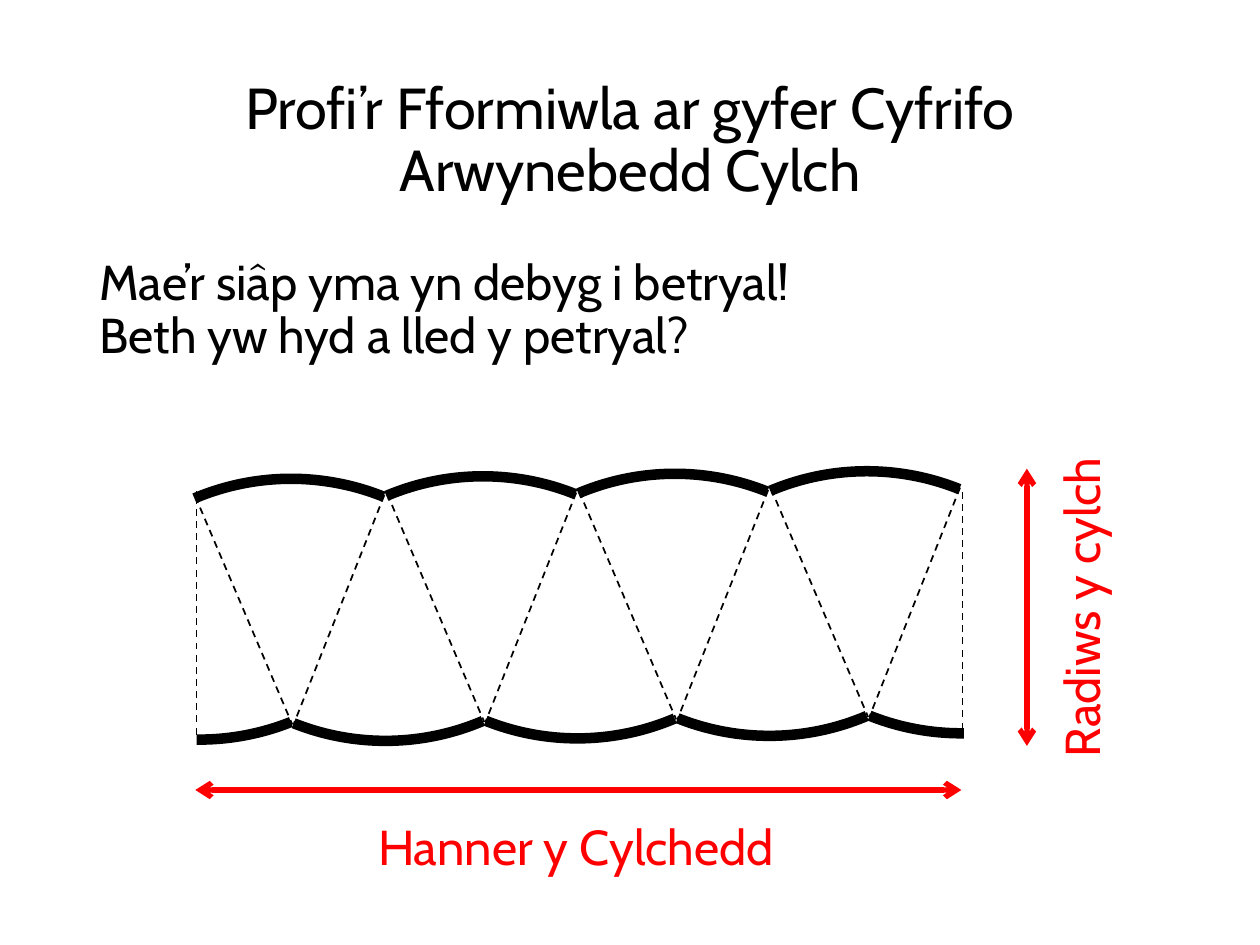
"""Build a slide that rearranges circle sectors into a near rectangle."""
from dataclasses import dataclass

from lxml import etree
from pptx import Presentation
from pptx import util as u
from pptx.dml.color import RGBColor
from pptx.enum import dml, shapes, text
from pptx.oxml import ns

HUES = {"ink": "000000", "mark": "FF0000"}
FONT = "Cabin"
COUNT = 4
STEP = 4.57 / 3
RISE = -0.02
SIDE = 3.94
FULL, HALF = 188.87, 175.38


@dataclass
class Label:
    words: str
    box: tuple
    hue: str = "mark"
    align: text.PP_ALIGN = text.PP_ALIGN.CENTER
    turn: float = 0


@dataclass
class Rule:
    start: tuple
    end: tuple
    hue: str = "ink"
    width: float = 1
    arrow: bool = False


@dataclass
class Arc:
    left: float
    top: float
    turn: float
    sweep: float = FULL
    flips: tuple = ()


LABELS = [
    Label("Mae’r siâp yma yn debyg i betryal!\nBeth yw hyd a lled y petryal?",
          (0.69, 2, 8.62, 1.2), "ink", text.PP_ALIGN.LEFT),
    Label("Hanner y Cylchedd", (0.26, 6.48, 8.62, 0.58)),
    Label("Radiws y cylch", (7.05, 4.53, 3.17, 0.58), turn=270),
]
EDGES = [
    Rule((7.64, 5.79), (7.64, 3.87)),
    Rule((1.56, 5.83), (1.56, 3.9)),
    Rule((1.55, 6.27), (7.63, 6.27), "mark", 3, True),
    Rule((8.15, 3.72), (8.15, 5.92), "mark", 3, True),
]


def style(item, form: dict) -> None:
    for name, value in form.items():
        setattr(item, name, value)


def tint(hue: str) -> RGBColor:
    return RGBColor.from_string(HUES[hue])


def write(shape, words: str, size: float, hue: str, form: dict) -> None:
    frame = shape.text_frame
    frame.word_wrap = True
    para = frame.paragraphs[0]
    style(para, {"line_spacing": 0.9, **form})
    for row, line in enumerate(words.split("\n")):
        if row:
            para.add_line_break()
        run = para.add_run()
        run.text = line
        style(run.font, {"name": FONT, "size": u.Pt(size), "bold": False})
        run.font.color.rgb = tint(hue)


def place(shape, box: tuple) -> None:
    names = ("left", "top", "width", "height")
    style(shape, dict(zip(names, map(u.Inches, box))))


def add_title(slide, words: str) -> None:
    title = slide.shapes.title
    place(title, (0.69, 0.4, 8.62, 1.45))
    style(title.text_frame, {"vertical_anchor": text.MSO_ANCHOR.MIDDLE,
                             "auto_size": text.MSO_AUTO_SIZE.NONE})
    write(title, words, 33, "ink", {"alignment": text.PP_ALIGN.CENTER})


def add_label(slide, label: Label) -> None:
    box = slide.shapes.add_textbox(*map(u.Inches, label.box))
    box.rotation = label.turn
    write(box, label.words, 28, label.hue,
          {"alignment": label.align, "space_before": u.Pt(7.5)})


def add_rule(slide, rule: Rule) -> None:
    ends = map(u.Inches, rule.start + rule.end)
    link = slide.shapes.add_connector(shapes.MSO_CONNECTOR.STRAIGHT, *ends)
    link.line.color.rgb = tint(rule.hue)
    link.line.width = u.Pt(rule.width)
    props = link.element.spPr
    if rule.arrow:
        stroke = props.find(ns.qn("a:ln"))
        for end in ("a:headEnd", "a:tailEnd"):
            etree.SubElement(stroke, ns.qn(end), type="arrow")
    else:
        link.line.dash_style = dml.MSO_LINE.DASH
    etree.SubElement(props, ns.qn("a:effectLst"))


def add_arc(slide, arc: Arc) -> None:
    box = map(u.Inches, (arc.left, arc.top, SIDE, SIDE))
    curve = slide.shapes.add_shape(shapes.MSO_SHAPE.ARC, *box)
    curve.adjustments[0] = 162
    curve.adjustments[1] = arc.sweep
    curve.rotation = arc.turn
    for flip in arc.flips:
        curve.element.spPr.xfrm.set(flip, "1")
    curve.shadow.inherit = False
    curve.fill.background()
    curve.line.color.rgb = tint("ink")
    curve.line.width = u.Pt(6)


def add_sectors(slide) -> None:
    for turn in range(COUNT):
        x, y = turn * STEP, turn * RISE
        tip = 5.75 + y
        add_rule(slide, Rule((1.55 + x, 3.94 + y), (2.32 + x, tip)))
        add_rule(slide, Rule((3.05 + x, 3.93 + y), (2.33 + x, tip)))
        add_arc(slide, Arc(0.34 + x, 3.8 + y, 337.1))
        sweep = HALF if turn == COUNT - 1 else FULL
        add_arc(slide, Arc(1.09 + x, 1.94 + y, 21.7, sweep, ("flipV",)))
    add_arc(slide, Arc(-0.39, 1.93, 338.3, HALF, ("flipH", "flipV")))


def main() -> None:
    deck = Presentation()
    style(deck, {"slide_width": u.Inches(10), "slide_height": u.Inches(7.5)})
    slide = deck.slides.add_slide(deck.slide_layouts[5])
    add_title(slide, "Profi’r Fformiwla ar gyfer Cyfrifo Arwynebedd Cylch")
    add_sectors(slide)
    for rule in EDGES:
        add_rule(slide, rule)
    for label in LABELS:
        add_label(slide, label)
    deck.save("out.pptx")


if __name__ == "__main__":
    main()
